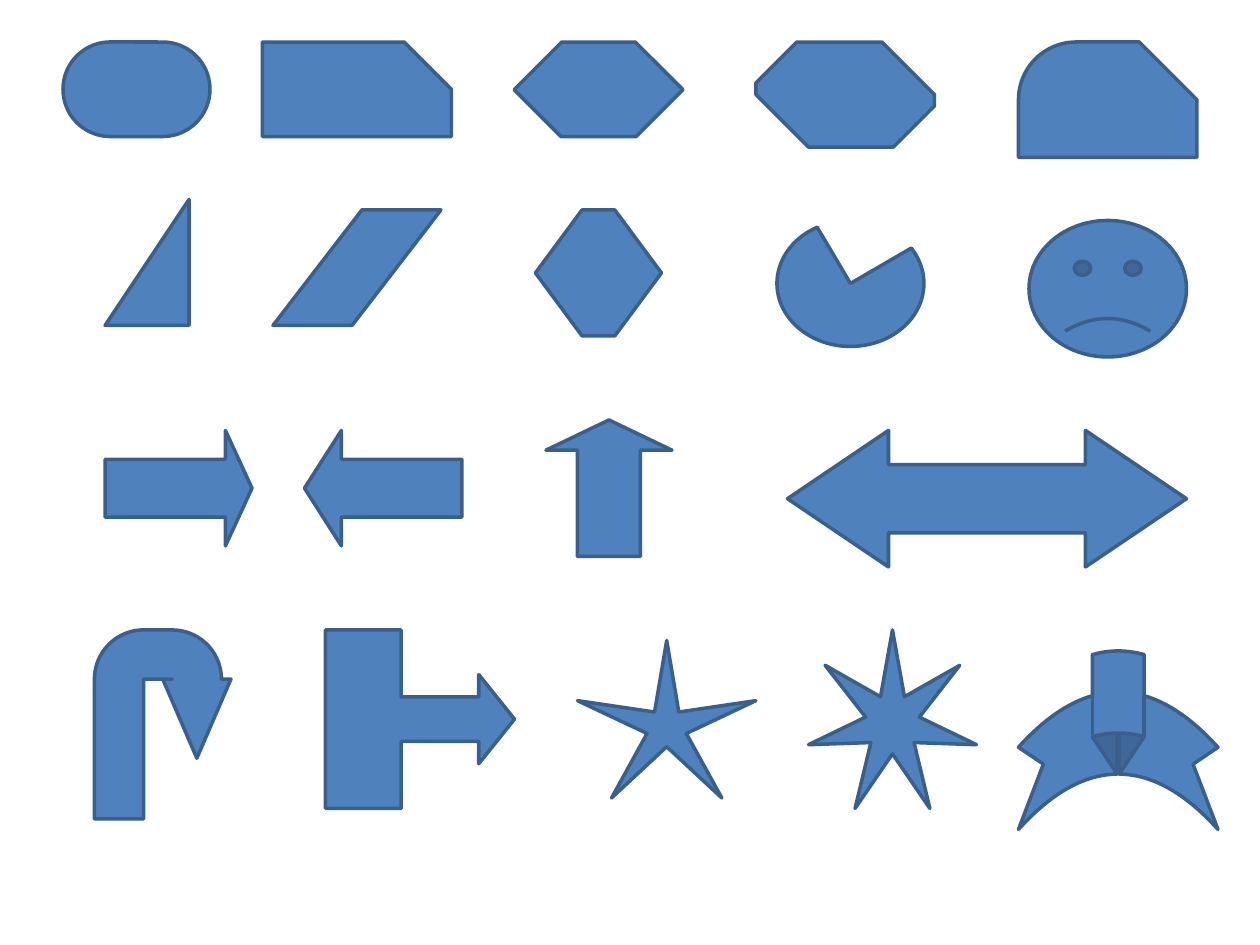
from pptx import Presentation
from pptx.dml.color import RGBColor
from pptx.enum.shapes import MSO_SHAPE as SHAPE
from pptx.util import Inches, Pt

COLORS = {"fill": "4F81BD", "line": "3A5F8C"}
LINE_WIDTH = 2
COLS, ROWS = 120, 90

SHAPE_ROWS = [
    [
        (SHAPE.ROUNDED_RECTANGLE, (6, 4, 14, 9), [0.5]),
        (SHAPE.SNIP_1_RECTANGLE, (25, 4, 18, 9), [0.5]),
        (SHAPE.SNIP_2_SAME_RECTANGLE, (49, 4, 16, 9), [0.5, 0.49]),
        (SHAPE.SNIP_2_DIAG_RECTANGLE, (72, 4, 17, 10), [0.39, 0.5]),
        (SHAPE.SNIP_ROUND_RECTANGLE, (97, 4, 17, 11), [0.5, 0.5]),
    ],
    [
        (SHAPE.ISOSCELES_TRIANGLE, (10, 19, 8, 12), [1]),
        (SHAPE.PARALLELOGRAM, (26, 20, 16, 11), [0.77]),
        (SHAPE.HEXAGON, (51, 20, 12, 12), [0.37]),
        (SHAPE.PIE, (74, 21, 14, 12), [197.9, 143.61]),
        (SHAPE.SMILEY_FACE, (98, 21, 15, 13), [-0.05]),
    ],
    [
        (SHAPE.RIGHT_ARROW, (10, 41, 14, 11), [0.5, 0.23]),
        (SHAPE.LEFT_ARROW, (29, 41, 15, 11), [0.5, 0.32]),
        (SHAPE.UP_ARROW, (52, 40, 12, 13), [0.5, 0.24]),
        (SHAPE.LEFT_RIGHT_ARROW, (75, 41, 38, 13), [0.5, 0.74]),
    ],
    [
        (SHAPE.U_TURN_ARROW, (9, 60, 13, 18), [0.36, 0.25, 0.58, 0.44, 0.6]),
        (SHAPE.RIGHT_ARROW_CALLOUT, (31, 60, 18, 17), [0.25, 0.25, 0.2, 0.4]),
        (SHAPE.STAR_5_POINT, (55, 61, 17, 15), [0.11]),
        (SHAPE.STAR_7_POINT, (77, 60, 16, 17), [0.16]),
        (SHAPE.CURVED_UP_RIBBON, (97, 62, 19, 17), [0.54, 0.26, 0.07]),
    ],
]


def add_figure(s, kind, cells, adjustments):
    left, top, width, height = (round(n * unit) for n, unit in zip(cells, units))
    sp = s.shapes.add_shape(kind, left, top, width, height)
    for i, value in enumerate(adjustments):
        sp.adjustments[i] = value
    sp.shadow.inherit = False
    sp.fill.solid()
    sp.fill.fore_color.rgb = RGBColor.from_string(COLORS["fill"])
    sp.line.color.rgb = RGBColor.from_string(COLORS["line"])
    sp.line.width = Pt(LINE_WIDTH)


prs = Presentation()
prs.slide_width, prs.slide_height = Inches(10), Inches(7.5)
units = (prs.slide_width / COLS, prs.slide_height / ROWS) * 2
s = prs.slides.add_slide(prs.slide_layouts.get_by_name("Blank"))
for row in SHAPE_ROWS:
    for figure in row:
        add_figure(s, *figure)
prs.save("out.pptx")
